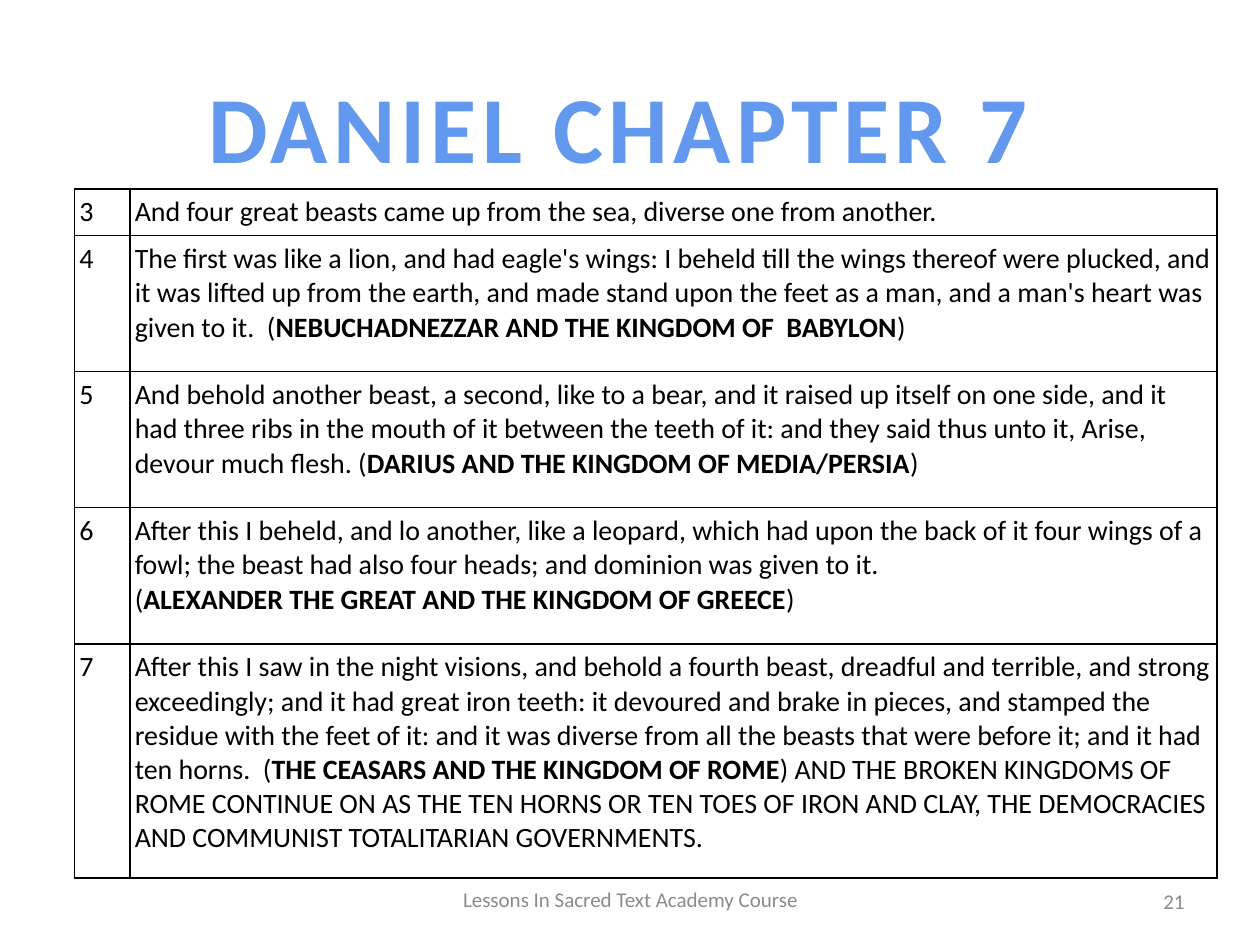
"""Build the Daniel chapter 7 slide with its table of verses."""
import lxml.etree
import pptx
import pptx.dml.color
import pptx.enum.text
import pptx.oxml.ns
import pptx.util

Inches = pptx.util.Inches
Pt = pptx.util.Pt
Align = pptx.enum.text.PP_ALIGN
Anchor = pptx.enum.text.MSO_ANCHOR
qn = pptx.oxml.ns.qn

BLACK = pptx.dml.color.RGBColor(0x00, 0x00, 0x00)
GREY = pptx.dml.color.RGBColor(0x8B, 0x8B, 0x8B)
BLUE = pptx.dml.color.RGBColor(0x62, 0x98, 0xED)

COLUMN_WIDTHS = (0.44, 8.63)
ROW_HEIGHTS = (0.37, 1.08, 1.08, 1.08, 1.86)

VERSES = {
    "3": [("And four great beasts came up from the sea, diverse one from another.",)],
    "4": [(
        "The first was like a lion, and had eagle's wings: I beheld till the wings "
        "thereof were plucked, and it was lifted up from the earth, and made stand "
        "upon the feet as a man, and a man's heart was given to it.  (",
        "NEBUCHADNEZZAR AND THE KINGDOM OF  BABYLON",
        ")",
    )],
    "5": [(
        "And behold another beast, a second, like to a bear, and it raised up itself "
        "on one side, and it had three ribs in the mouth of it between the teeth of "
        "it: and they said thus unto it, Arise, devour much flesh. (",
        "DARIUS AND THE KINGDOM OF MEDIA/PERSIA",
        ")",
    )],
    "6": [
        ("After this I beheld, and lo another, like a leopard, which had upon the back "
         "of it four wings of a fowl; the beast had also four heads; and dominion was "
         "given to it.",),
        ("(", "ALEXANDER THE GREAT AND THE KINGDOM OF GREECE", ")"),
    ],
    "7": [(
        "After this I saw in the night visions, and behold a fourth beast, dreadful "
        "and terrible, and strong exceedingly; and it had great iron teeth: it "
        "devoured and brake in pieces, and stamped the residue with the feet of it: "
        "and it was diverse from all the beasts that were before it; and it had ten "
        "horns.  (",
        "THE CEASARS AND THE KINGDOM OF ROME",
        ") AND THE BROKEN KINGDOMS OF ROME CONTINUE ON AS THE TEN HORNS OR TEN TOES "
        "OF IRON AND CLAY, THE DEMOCRACIES AND COMMUNIST TOTALITARIAN GOVERNMENTS.",
    )],
}


def write_text(paragraph, text, size=16, color=BLACK, bold=False, align=None, spacing=0):
    """Add a formatted run to the paragraph."""
    run = paragraph.add_run()
    run.text = text
    run.font.name = "Calibri"
    run.font.size = Pt(size)
    run.font.bold = bold
    run.font.color.rgb = color
    if align is not None:
        paragraph.alignment = align
    if spacing:
        run.font._element.set("spc", str(spacing * 100))


def add_title(slide, text):
    """Move the title placeholder into place and fill it."""
    title = slide.shapes.title
    title.left, title.top = Inches(0.47), Inches(0.5)
    title.width, title.height = Inches(8.88), Inches(1)
    frame = title.text_frame
    frame.word_wrap = False
    frame.auto_size = pptx.enum.text.MSO_AUTO_SIZE.NONE
    frame.vertical_anchor = Anchor.TOP
    write_text(frame.paragraphs[0], text, size=54, color=BLUE, bold=True,
               align=Align.CENTER, spacing=3)


def add_footer(slide, text, left, top, width, height, align):
    """Add a small grey line of text at the foot of the slide."""
    box = slide.shapes.add_textbox(Inches(left), Inches(top), Inches(width), Inches(height))
    box.text_frame.word_wrap = True
    box.text_frame.vertical_anchor = Anchor.MIDDLE
    write_text(box.text_frame.paragraphs[0], text, size=12, color=GREY, align=align)


def add_borders(cell):
    """Draw a thin black line on all four sides of the cell."""
    properties = cell._tc.get_or_add_tcPr()
    for side in ("a:lnL", "a:lnR", "a:lnT", "a:lnB"):
        line = lxml.etree.SubElement(properties, qn(side), w=str(Pt(0.96)))
        fill = lxml.etree.SubElement(line, qn("a:solidFill"))
        lxml.etree.SubElement(fill, qn("a:srgbClr"), val=str(BLACK))


def fill_cell(cell, paragraphs):
    """Format the cell and write its paragraphs of alternating plain and bold text."""
    add_borders(cell)
    cell.fill.background()
    cell.margin_left = cell.margin_right = Inches(0.04)
    cell.margin_top = cell.margin_bottom = Inches(0.05)
    frame = cell.text_frame
    for number, parts in enumerate(paragraphs):
        paragraph = frame.add_paragraph() if number else frame.paragraphs[0]
        for position, part in enumerate(parts):
            write_text(paragraph, part, bold=position % 2 == 1)


def add_verse_table(slide):
    """Add the table of verse numbers and verses."""
    table = slide.shapes.add_table(
        len(ROW_HEIGHTS), len(COLUMN_WIDTHS), Inches(0.59), Inches(1.5),
        Inches(sum(COLUMN_WIDTHS)), Inches(sum(ROW_HEIGHTS))).table
    table.first_row = table.horz_banding = False
    for column, width in zip(table.columns, COLUMN_WIDTHS):
        column.width = Inches(width)
    for row, height, (number, verse) in zip(table.rows, ROW_HEIGHTS, VERSES.items()):
        row.height = Inches(height)
        fill_cell(row.cells[0], [(number,)])
        fill_cell(row.cells[1], verse)


def main():
    """Build and save the presentation."""
    presentation = pptx.Presentation()
    presentation.slide_width, presentation.slide_height = Inches(10), Inches(7.5)
    slide = presentation.slides.add_slide(presentation.slide_layouts.get_by_name("Title Only"))
    add_footer(slide, "Lessons In Sacred Text Academy Course", 3.42, 6.92, 3.17, 0.43,
               Align.CENTER)
    add_footer(slide, "21", 7.17, 6.95, 2.33, 0.4, Align.RIGHT)
    add_verse_table(slide)
    add_title(slide, "DANIEL CHAPTER 7")
    presentation.save("out.pptx")


if __name__ == "__main__":
    main()
